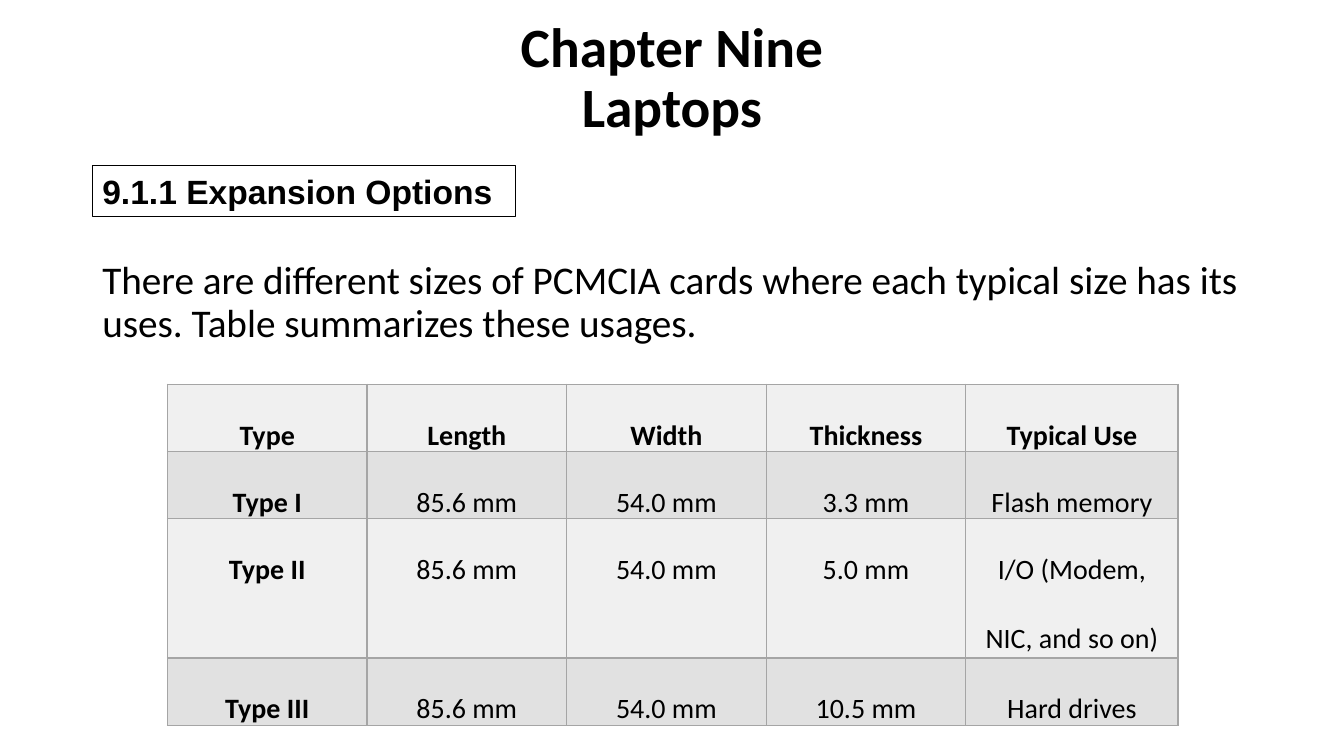
from lxml.etree import SubElement
from pptx import Presentation
from pptx.dml.color import RGBColor
from pptx.enum.shapes import MSO_SHAPE
from pptx.enum.text import MSO_ANCHOR, PP_ALIGN
from pptx.oxml.ns import qn
from pptx.util import Cm, Pt

COLORS = {"text": "000000", "light": "F0F0F0", "dark": "E1E1E1", "border": "A5A5A5"}


def write_text(frame, text, size, font="Calibri", bold=False, align=PP_ALIGN.LEFT,
               spacing=1.0, before=0, anchor=MSO_ANCHOR.TOP):
    frame.word_wrap = True
    frame.vertical_anchor = anchor
    paragraph = frame.paragraphs[0]
    paragraph.text = text
    paragraph.alignment = align
    paragraph.line_spacing = spacing
    paragraph.space_before = Pt(before)
    for run in paragraph.runs:
        run.font.size = Pt(size)
        run.font.name = font
        run.font.bold = bold
        run.font.color.rgb = RGBColor.from_string(COLORS["text"])


def add_borders(cell):
    properties = cell._tc.get_or_add_tcPr()
    for side in ("lnL", "lnR", "lnT", "lnB"):
        line = SubElement(properties, qn(f"a:{side}"), w=str(Pt(1)))
        fill = SubElement(line, qn("a:solidFill"))
        SubElement(fill, qn("a:srgbClr"), val=COLORS["border"])


presentation = Presentation()
presentation.slide_width = Cm(33.87)
presentation.slide_height = Cm(19.05)
slide = presentation.slides.add_slide(presentation.slide_layouts[6])

title = slide.shapes.add_textbox(Cm(2.33), Cm(1.01), Cm(29.21), Cm(3.68))
title.text_frame.margin_top = 0
title.text_frame.margin_bottom = Cm(1.68)
write_text(title.text_frame, "Chapter Nine\vLaptops", size=39.6, bold=True,
           align=PP_ALIGN.CENTER, spacing=0.9, anchor=MSO_ANCHOR.MIDDLE)

body = slide.shapes.add_textbox(Cm(2.33), Cm(6.45), Cm(29.21), Cm(3.23))
write_text(body.text_frame,
           "There are different sizes of PCMCIA cards where each typical size has its uses. "
           "Table summarizes these usages.",
           size=28, spacing=0.9, before=10)

heading = slide.shapes.add_shape(MSO_SHAPE.RECTANGLE, Cm(2.33), Cm(4.18), Cm(10.67), Cm(1.28))
heading.shadow.inherit = False
heading.fill.background()
heading.line.color.rgb = RGBColor.from_string(COLORS["text"])
heading.line.width = Pt(0.75)
write_text(heading.text_frame, "9.1.1 Expansion Options", size=24, font="Arial", bold=True)

card_rows = [
    ("Type", "Length", "Width", "Thickness", "Typical Use"),
    ("Type I", "85.6 mm", "54.0 mm", "3.3 mm", "Flash memory"),
    ("Type II", "85.6 mm", "54.0 mm", "5.0 mm", "I/O (Modem, NIC, and so on)"),
    ("Type III", "85.6 mm", "54.0 mm", "10.5 mm", "Hard drives"),
]
column_widths = [5.03] * 4 + [5.35]
row_heights = [1.69, 1.69, 3.51, 1.69]

table = slide.shapes.add_table(len(card_rows), len(column_widths), Cm(4.22), Cm(9.68),
                               Cm(sum(column_widths)), Cm(sum(row_heights))).table
for column, width in zip(table.columns, column_widths):
    column.width = Cm(width)
for row, height in zip(table.rows, row_heights):
    row.height = Cm(height)

for row_index, values in enumerate(card_rows):
    for column_index, value in enumerate(values):
        cell = table.cell(row_index, column_index)
        cell.margin_left = cell.margin_right = Cm(0.18)
        cell.margin_top = cell.margin_bottom = 0
        add_borders(cell)
        cell.fill.solid()
        shade = "dark" if row_index % 2 else "light"
        cell.fill.fore_color.rgb = RGBColor.from_string(COLORS[shade])
        write_text(cell.text_frame, value, size=20, bold=row_index == 0 or column_index == 0,
                   align=PP_ALIGN.CENTER, spacing=2.0)

presentation.save("out.pptx")
